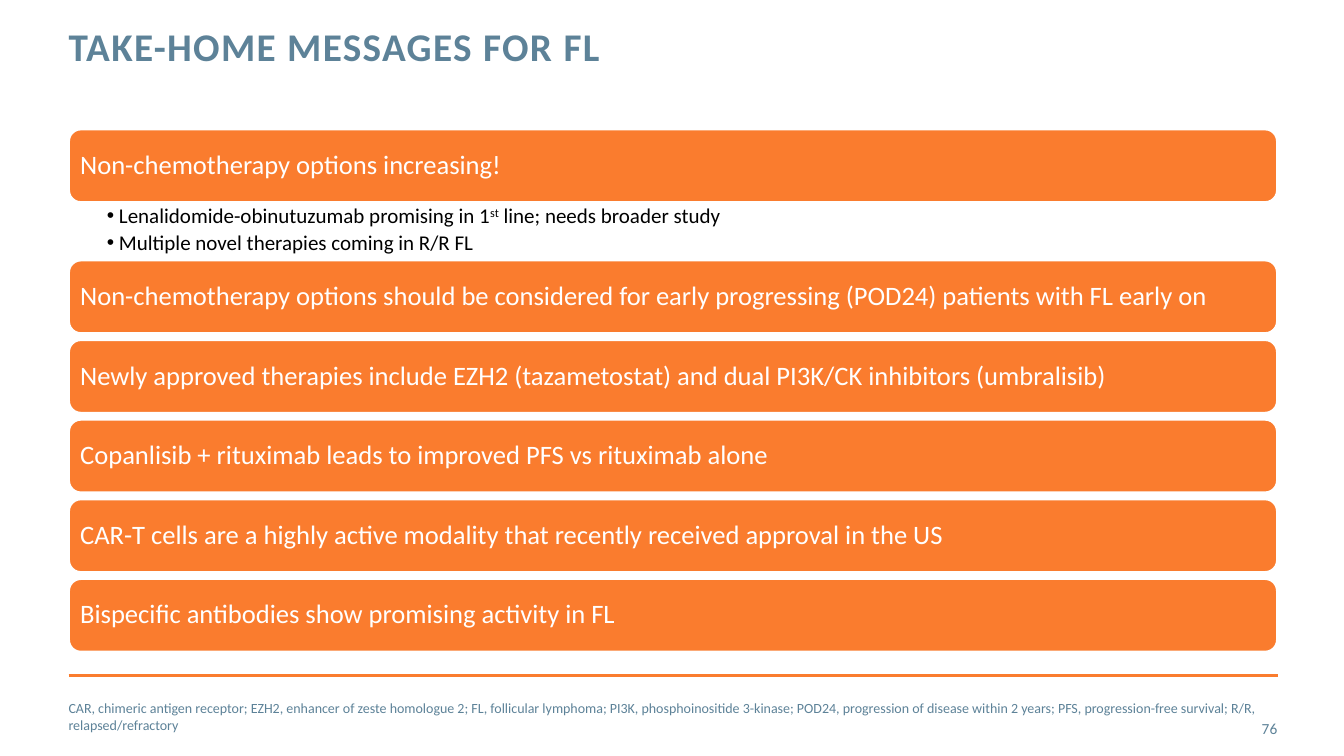
from lxml import etree
from pptx import Presentation
from pptx.dml.color import RGBColor
from pptx.enum.shapes import MSO_CONNECTOR, MSO_SHAPE
from pptx.enum.text import MSO_ANCHOR, MSO_AUTO_SIZE, PP_ALIGN
from pptx.oxml.ns import qn
from pptx.util import Inches, Pt

ORANGE = RGBColor(0xFA, 0x7C, 0x2E)
SLATE = RGBColor(0x5D, 0x82, 0x98)
WHITE = RGBColor(0xFF, 0xFF, 0xFF)
BLACK = RGBColor(0, 0, 0)
TOP, MIDDLE = MSO_ANCHOR.TOP, MSO_ANCHOR.MIDDLE
LEFT_ALIGN, RIGHT_ALIGN = PP_ALIGN.LEFT, PP_ALIGN.RIGHT
NO_FIT = MSO_AUTO_SIZE.NONE
ROUNDED, STRAIGHT = MSO_SHAPE.ROUNDED_RECTANGLE, MSO_CONNECTOR.STRAIGHT

LEFT, WIDTH = 0.68, 11.99
BAR_HEIGHT, BAR_GAP, DETAIL_HEIGHT = 0.73, 0.06, 0.57

TITLE_FONT = {"name": "Calibri", "size": Pt(28), "bold": True}
BAR_FONT = {"name": "Calibri", "size": Pt(19)}
DETAIL_FONT = {"name": "Calibri", "size": Pt(15)}
NOTE_FONT = {"name": "Calibri", "size": Pt(10)}
NUMBER_FONT = {"name": "Calibri", "size": Pt(11)}

DETAILS = [
    [("Lenalidomide-obinutuzumab promising in 1", False), ("st", True),
     (" line; needs broader study", False)],
    [("Multiple novel therapies coming in R/R FL", False)],
]
MESSAGES = [
    ("Non-chemotherapy options increasing!", DETAILS),
    ("Non-chemotherapy options should be considered for early progressing (POD24) patients with FL early on", []),
    ("Newly approved therapies include EZH2 (tazametostat) and dual PI3K/CK inhibitors (umbralisib)", []),
    ("Copanlisib + rituximab leads to improved PFS vs rituximab alone", []),
    ("CAR-T cells are a highly active modality that recently received approval in the US", []),
    ("Bispecific antibodies show promising activity in FL", []),
]
ABBREVIATIONS = (
    "CAR, chimeric antigen receptor; EZH2, enhancer of zeste homologue 2; FL, follicular lymphoma; "
    "PI3K, phosphoinositide 3-kinase; POD24, progression of disease within 2 years; "
    "PFS, progression-free survival; R/R, relapsed/refractory"
)


def apply(target, values):
    for key, value in values.items():
        setattr(target, key, value)


def place(part, left, top, width, height):
    apply(part, {"left": Inches(left), "top": Inches(top),
                 "width": Inches(width), "height": Inches(height)})


def set_frame(frame, anchor, margins=(0, 0, 0, 0)):
    left, top, right, bottom = (Inches(margin) for margin in margins)
    apply(frame, {"word_wrap": True, "auto_size": NO_FIT, "vertical_anchor": anchor,
                  "margin_left": left, "margin_top": top,
                  "margin_right": right, "margin_bottom": bottom})


def set_bullet(paragraph, indent, symbol=None):
    properties = paragraph._p.get_or_add_pPr()
    properties.set("marL", str(Inches(indent)))
    properties.set("indent", str(-Inches(indent)))
    if symbol:
        etree.SubElement(properties, qn("a:buChar")).set("char", symbol)
    else:
        etree.SubElement(properties, qn("a:buNone"))


def set_paragraph(paragraph, font, color, alignment=LEFT_ALIGN, line_spacing=1.0, space_after=0):
    apply(paragraph, {"alignment": alignment, "line_spacing": line_spacing,
                      "space_before": Pt(0), "space_after": Pt(space_after)})
    for run in paragraph.runs:
        apply(run.font, font)
        run.font.color.rgb = color


def add_heading(title, left, top, width, height):
    place(title, left, top, width, height)
    set_frame(title.text_frame, TOP)
    title.text_frame.text = "TAKE-HOME MESSAGES FOR FL"
    heading = title.text_frame.paragraphs[0]
    set_paragraph(heading, TITLE_FONT, SLATE, line_spacing=Pt(30))
    heading.runs[0]._r.get_or_add_rPr().set("spc", "100")


def add_bar(slide, message, left, top, width, height):
    bar = slide.shapes.add_shape(ROUNDED, Inches(left), Inches(top), Inches(width), Inches(height))
    bar.shadow.inherit = False
    bar.fill.solid()
    bar.fill.fore_color.rgb = ORANGE
    bar.line.color.rgb = WHITE
    bar.line.width = Pt(2)
    set_frame(bar.text_frame, MIDDLE, (0.08, 0.08, 0.08, 0.08))
    bar.text_frame.text = message
    set_paragraph(bar.text_frame.paragraphs[0], BAR_FONT, WHITE, line_spacing=0.9)


def add_details(body, details, left, top, width, height):
    place(body, left, top, width, height)
    frame = body.text_frame
    set_frame(frame, TOP, (0.38, 0.03, 0.15, 0.03))
    for index, pieces in enumerate(details):
        paragraph = frame.add_paragraph() if index else frame.paragraphs[0]
        paragraph.level = 1
        set_bullet(paragraph, 0.12, "•")
        for words, raised in pieces:
            run = paragraph.add_run()
            run.text = words
            if raised:
                run._r.get_or_add_rPr().set("baseline", "30000")
        set_paragraph(paragraph, DETAIL_FONT, BLACK, line_spacing=0.9, space_after=3)


def add_messages(slide, body, left, top, width):
    for message, details in MESSAGES:
        add_bar(slide, message, left, top, width, BAR_HEIGHT)
        top += BAR_HEIGHT
        if details:
            add_details(body, details, left, top, width, DETAIL_HEIGHT)
            top += DETAIL_HEIGHT
        else:
            top += BAR_GAP


def add_footer(slide, abbreviations, left, top, width):
    rule = slide.shapes.add_connector(STRAIGHT, Inches(left), Inches(top),
                                      Inches(left + width), Inches(top))
    rule.line.color.rgb = ORANGE
    rule.line.width = Pt(2)
    etree.SubElement(rule._element.spPr, qn("a:effectLst"))

    place(abbreviations, left, top + 0.21, width - 0.21, 0.4)
    set_frame(abbreviations.text_frame, MIDDLE)
    abbreviations.text_frame.text = ABBREVIATIONS
    note = abbreviations.text_frame.paragraphs[0]
    set_bullet(note, 0)
    set_paragraph(note, NOTE_FONT, SLATE)

    page_number = slide.shapes.add_textbox(Inches(left + width - 0.87), Inches(top + 0.33),
                                           Inches(0.86), Inches(0.4))
    set_frame(page_number.text_frame, MIDDLE)
    page_number.text_frame.text = "76"
    set_paragraph(page_number.text_frame.paragraphs[0], NUMBER_FONT, SLATE, RIGHT_ALIGN)


def main():
    deck = Presentation()
    apply(deck, {"slide_width": Inches(13.33), "slide_height": Inches(7.5)})
    slide = deck.slides.add_slide(deck.slide_layouts[3])
    title, details, abbreviations = list(slide.placeholders)[:3]
    add_heading(title, LEFT, 0.27, 9.56, 0.88)
    add_messages(slide, details, LEFT, 1.28, WIDTH)
    add_footer(slide, abbreviations, LEFT, 6.7, 12)
    deck.save("out.pptx")


if __name__ == "__main__":
    main()
